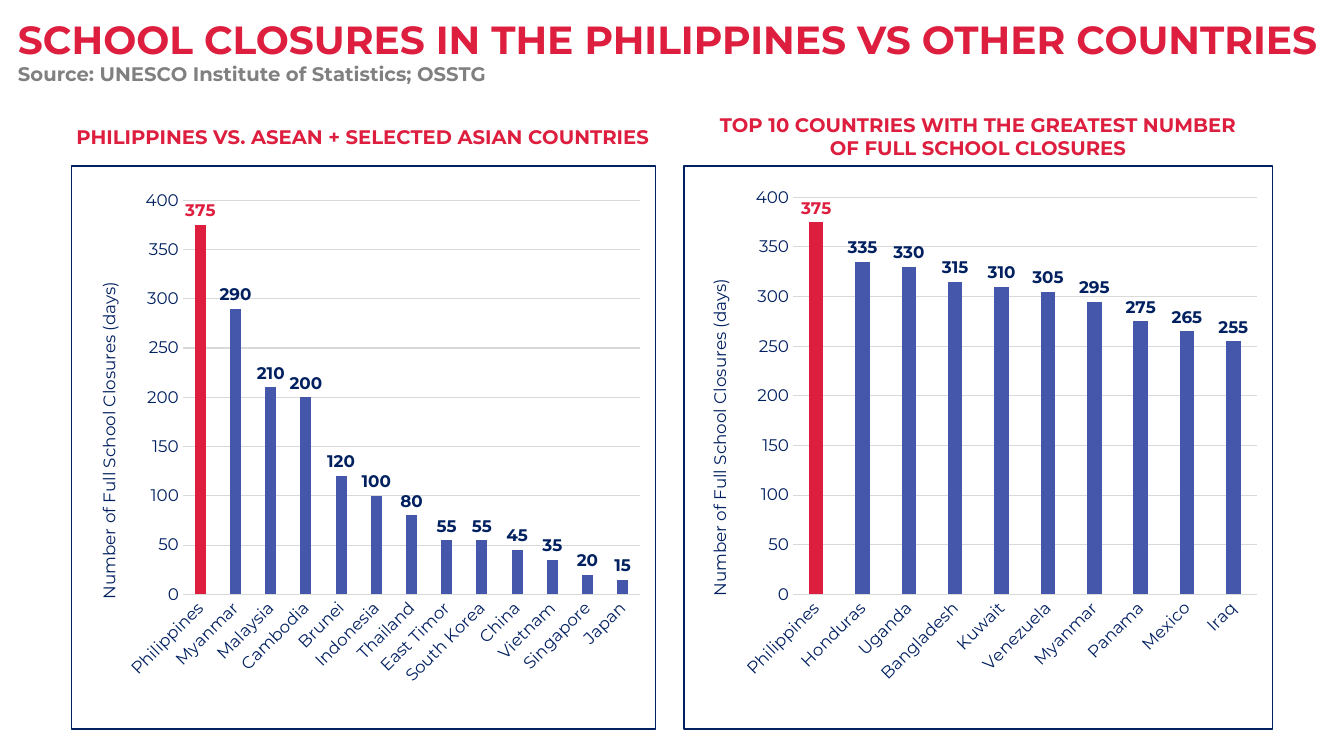
from pptx import Presentation
from pptx.chart.data import CategoryChartData
from pptx.dml.color import RGBColor
from pptx.enum.chart import XL_CHART_TYPE, XL_LABEL_POSITION, XL_TICK_MARK
from pptx.enum.text import PP_ALIGN
from pptx.oxml import parse_xml
from pptx.oxml.ns import nsdecls, qn
from pptx.util import Pt

COLUMN = XL_CHART_TYPE.COLUMN_CLUSTERED
OUT_END = XL_LABEL_POSITION.OUTSIDE_END
NO_TICK = XL_TICK_MARK.NONE
LEFT, CENTER = PP_ALIGN.LEFT, PP_ALIGN.CENTER

THEME = {
    "font": "Montserrat",
    "red": "DD1E3E", "gray": "808080", "navy": "002060",
    "blue": "4457AB", "grid": "D9D9D9",
    "title": 28, "head": 14, "chart": 12,
}

# text, box (left, top, width, height), size, color, alignment
TEXTS = [
    ("SCHOOL CLOSURES IN THE PHILIPPINES VS OTHER COUNTRIES",
     (5.76, 7.2, 944, 41), "title", "red", LEFT),
    ("Source: UNESCO Institute of Statistics; OSSTG",
     (5.76, 41, 847.5, 24.5), "head", "gray", LEFT),
    ("PHILIPPINES VS. ASEAN + SELECTED ASIAN COUNTRIES",
     (37.5, 85.7, 443.5, 24.5), "head", "red", CENTER),
    ("TOP 10 COUNTRIES WITH THE GREATEST NUMBER OF FULL SCHOOL CLOSURES",
     (501, 77, 395.3, 41), "head", "red", CENTER),
]

AXIS_TITLE = "Number of Full School Closures (days)"
TOP, HEIGHT = 118, 403.2
CHARTS = [
    {"left": 50.4, "width": 418.3,
     "plot": {"x": 0.191, "y": 0.061, "w": 0.783, "h": 0.7},
     "label": {"x": 0.04, "y": 0.2},
     "days": {"Philippines": 375, "Myanmar": 290, "Malaysia": 210,
              "Cambodia": 200, "Brunei": 120, "Indonesia": 100,
              "Thailand": 80, "East Timor": 55, "South Korea": 55,
              "China": 45, "Vietnam": 35, "Singapore": 20, "Japan": 15}},
    {"left": 488.2, "width": 421.2,
     "plot": {"x": 0.185, "y": 0.056, "w": 0.788, "h": 0.705},
     "label": {"x": 0.036, "y": 0.195},
     "days": {"Philippines": 375, "Honduras": 335, "Uganda": 330,
              "Bangladesh": 315, "Kuwait": 310, "Venezuela": 305,
              "Myanmar": 295, "Panama": 275, "Mexico": 265, "Iraq": 255}},
]


def color(name):
    return RGBColor.from_string(THEME[name])


def style(font, size, tint, bold=False):
    font.name = THEME["font"]
    font.size = Pt(THEME[size])
    font.bold = bold
    font.color.rgb = color(tint)


def paint(fill, tint):
    fill.solid()
    fill.fore_color.rgb = color(tint)


def rule(line, tint):
    line.width = Pt(0.75)
    line.color.rgb = color(tint)


def add_text(slide, text, box, size, tint, align):
    frame = slide.shapes.add_textbox(*map(Pt, box)).text_frame
    frame.word_wrap = True
    frame.text = text
    para = frame.paragraphs[0]
    para.alignment = align
    style(para.runs[0].font, size, tint, True)


def place(parent, spots, inner=False):
    """Give a chart part a manual layout in fractions of the chart."""
    old = parent.find(qn("c:layout"))
    index = 0
    if old is not None:
        index = parent.index(old)
        parent.remove(old)
    target = '<c:layoutTarget val="inner"/>' if inner else ""
    modes = "".join(f'<c:{key}Mode val="edge"/>' for key in "xy")
    sizes = "".join(f'<c:{key} val="{val}"/>' for key, val in spots.items())
    parent.insert(index, parse_xml(
        f'<c:layout {nsdecls("c")}><c:manualLayout>{target}{modes}{sizes}'
        '</c:manualLayout></c:layout>'))


def turn(body, angle):
    body.set("rot", str(-angle * 60000))
    body.set("vert", "horz")


def frame_chart(chart):
    """Draw the border round the whole chart."""
    border = parse_xml(
        f'<c:spPr {nsdecls("c", "a")}><a:noFill/><a:ln w="{Pt(1)}"><a:solidFill>'
        f'<a:srgbClr val="{THEME["navy"]}"/></a:solidFill></a:ln></c:spPr>')
    chart.element.find(qn("c:chart")).addnext(border)


def style_axes(chart, label):
    names, days = chart.category_axis, chart.value_axis
    for axis in (names, days):
        axis.major_tick_mark = axis.minor_tick_mark = NO_TICK
        style(axis.tick_labels.font, "chart", "navy")
    rule(names.format.line, "grid")
    turn(names._element.find(qn("c:txPr")).find(qn("a:bodyPr")), 45)

    days.minimum_scale, days.maximum_scale, days.major_unit = 0, 400, 50
    days.format.line.fill.background()
    days.has_major_gridlines = True
    rule(days.major_gridlines.format.line, "grid")
    frame = days.axis_title.text_frame
    frame.text = AXIS_TITLE
    style(frame.paragraphs[0].runs[0].font, "chart", "navy")
    turn(frame._txBody.find(qn("a:bodyPr")), 90)
    place(days.axis_title._element, label)


def style_bars(plot):
    plot.gap_width, plot.overlap = 219, -27
    plot.vary_by_categories = False
    bars = plot.series[0]
    bars.invert_if_negative = False
    paint(bars.format.fill, "blue")
    labels = bars.data_labels
    labels.show_value = True
    labels.position = OUT_END
    style(labels.font, "chart", "navy", True)
    first = bars.points[0]
    paint(first.format.fill, "red")
    style(first.data_label.font, "chart", "red", True)
    first.data_label.position = OUT_END


def add_bars(slide, left, width, plot, label, days):
    data = CategoryChartData()
    data.categories = list(days)
    data.add_series("Series 1", list(days.values()))
    chart = slide.shapes.add_chart(
        COLUMN, Pt(left), Pt(TOP), Pt(width), Pt(HEIGHT), data).chart
    chart.has_title = chart.has_legend = False
    style(chart.font, "chart", "navy")
    frame_chart(chart)
    style_axes(chart, label)
    style_bars(chart.plots[0])
    area = chart.element.find(qn("c:chart")).find(qn("c:plotArea"))
    place(area, plot, inner=True)


def main():
    deck = Presentation()
    deck.slide_width, deck.slide_height = Pt(960), Pt(540)
    slide = deck.slides.add_slide(deck.slide_layouts[6])
    for item in CHARTS:
        add_bars(slide, **item)
    for item in TEXTS:
        add_text(slide, *item)
    deck.save("out.pptx")


if __name__ == "__main__":
    main()
